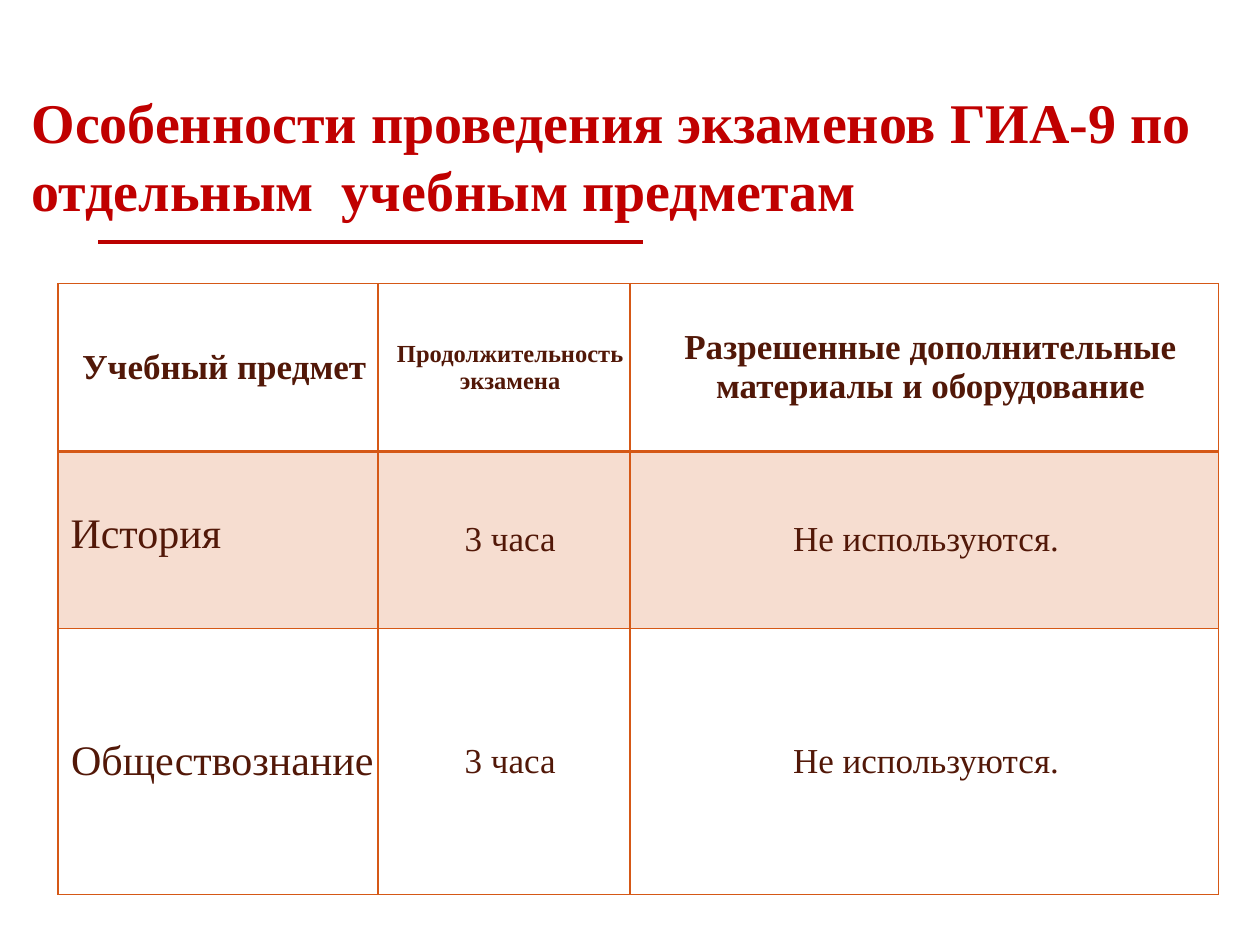
from dataclasses import dataclass

from lxml.etree import SubElement
from pptx import Presentation
from pptx.dml.color import RGBColor
from pptx.enum.shapes import MSO_CONNECTOR
from pptx.enum.text import MSO_ANCHOR, MSO_AUTO_SIZE, PP_ALIGN
from pptx.oxml import parse_xml
from pptx.oxml.ns import nsdecls, qn
from pptx.util import Inches, Pt


@dataclass(frozen=True)
class Theme:
    """Colours, font and type sizes of the slide."""
    font: str = "Times New Roman"
    title: str = "C00000"
    rule: str = "BB0100"
    text: str = "521808"
    accent: str = "D55816"
    band_opacity: int = 20
    title_size: int = 32
    subject_size: int = 24
    body_size: int = 20
    small_size: int = 14


class ExamSlide:
    """Draws elements on a grid of 100 columns by 75 rows."""

    def __init__(self, presentation, theme):
        self.theme = theme
        self.column = presentation.slide_width / 100
        self.row = presentation.slide_height / 75
        self.slide = presentation.slides.add_slide(presentation.slide_layouts[5])

    def across(self, columns):
        return round(columns * self.column)

    def down(self, rows):
        return round(rows * self.row)

    def box(self, left, top, width, height):
        return self.across(left), self.down(top), self.across(width), self.down(height)

    def run(self, paragraph, text, size, color, bold):
        run = paragraph.add_run()
        run.text = text
        run.font.name = self.theme.font
        run.font.size = Pt(size)
        run.font.bold = bold
        run.font.color.rgb = RGBColor.from_string(color)

    def title(self, text, *place):
        shape = self.slide.shapes.title
        shape.left, shape.top, shape.width, shape.height = self.box(*place)
        frame = shape.text_frame
        frame.margin_left = frame.margin_top = frame.margin_right = frame.margin_bottom = 0
        frame.word_wrap = True
        frame.auto_size = MSO_AUTO_SIZE.SHAPE_TO_FIT_TEXT
        frame.vertical_anchor = MSO_ANCHOR.MIDDLE
        paragraph = frame.paragraphs[0]
        paragraph.alignment = PP_ALIGN.LEFT
        self.run(paragraph, text, self.theme.title_size, self.theme.title, True)

    def rule(self, start, end, level, weight):
        line = self.slide.shapes.add_connector(
            MSO_CONNECTOR.STRAIGHT, self.across(start), self.down(level),
            self.across(end), self.down(level))
        line.line.color.rgb = RGBColor.from_string(self.theme.rule)
        line.line.width = Pt(weight)
        SubElement(line.element.spPr, qn("a:effectLst"))

    def borders(self, cell, weights):
        properties = cell._tc.get_or_add_tcPr()
        for position, (side, weight) in enumerate(weights.items()):
            properties.insert(position, parse_xml(
                f'<a:ln{side} {nsdecls("a")} w="{Pt(weight)}"><a:solidFill>'
                f'<a:srgbClr val="{self.theme.accent}"/></a:solidFill></a:ln{side}>'))

    def band(self, cell):
        cell.fill.solid()
        cell.fill.fore_color.rgb = RGBColor.from_string(self.theme.accent)
        color = cell._tc.tcPr.find(f".//{qn('a:srgbClr')}")
        SubElement(color, qn("a:alpha"), val=str(self.theme.band_opacity * 1000))

    def cell(self, cell, lines, size, bold, align=PP_ALIGN.CENTER, indent=0.1):
        cell.margin_left = cell.margin_top = cell.margin_right = cell.margin_bottom = 0
        cell.vertical_anchor = MSO_ANCHOR.MIDDLE
        frame = cell.text_frame
        for number, line in enumerate(lines):
            paragraph = frame.add_paragraph() if number else frame.paragraphs[0]
            paragraph.alignment = align
            paragraph._p.get_or_add_pPr().set("marL", str(Inches(indent)))
            self.run(paragraph, line, size, self.theme.text, bold)

    def table(self, header, rows, widths, heights, left, top):
        frame = self.slide.shapes.add_table(
            len(heights), len(widths),
            *self.box(left, top, sum(widths), sum(heights)))
        table = frame.table
        table.first_row = table.horz_banding = False
        for column, width in zip(table.columns, widths):
            column.width = self.across(width)
        for row, height in zip(table.rows, heights):
            row.height = self.down(height)
        for column, (lines, size) in enumerate(header):
            self.cell(table.cell(0, column), lines, size, True)
        for number, ((subject, align, indent), *values) in enumerate(rows, 1):
            self.cell(table.cell(number, 0), [subject], self.theme.subject_size,
                      False, align, indent)
            for column, value in enumerate(values, 1):
                self.cell(table.cell(number, column), [value], self.theme.body_size, False)
        for number in range(len(heights)):
            for column in range(len(widths)):
                cell = table.cell(number, column)
                if number == 1:
                    self.band(cell)
                else:
                    cell.fill.background()
                self.borders(cell, {"L": 1, "R": 1, "T": 2 if number == 1 else 1,
                                    "B": 2 if number == 0 else 1})
        return table


def main():
    theme = Theme()
    presentation = Presentation()
    presentation.slide_width, presentation.slide_height = Inches(10), Inches(7.5)
    slide = ExamSlide(presentation, theme)
    slide.rule(7.8, 51, 19.2, 2.5)
    slide.title("Особенности проведения экзаменов ГИА-9 по отдельным  учебным предметам",
                2.5, 6.7, 92.1, 11.2)
    header = [
        (["Учебный предмет"], theme.body_size),
        (["Продолжительность", "экзамена"], theme.small_size),
        (["Разрешенные дополнительные материалы и оборудование"], theme.body_size),
    ]
    conditions = ("3 часа", "Не используются. ")
    rows = [
        (("История", PP_ALIGN.LEFT, 0.1), *conditions),
        (("Обществознание", PP_ALIGN.CENTER, 0.07), *conditions),
    ]
    table = slide.table(header, rows, (25.4, 20, 46.7), (13.3, 14.1, 21.1), 4.6, 22.5)
    table.cell(1, 0).margin_bottom = slide.down(0.9)
    presentation.save("out.pptx")


if __name__ == "__main__":
    main()
